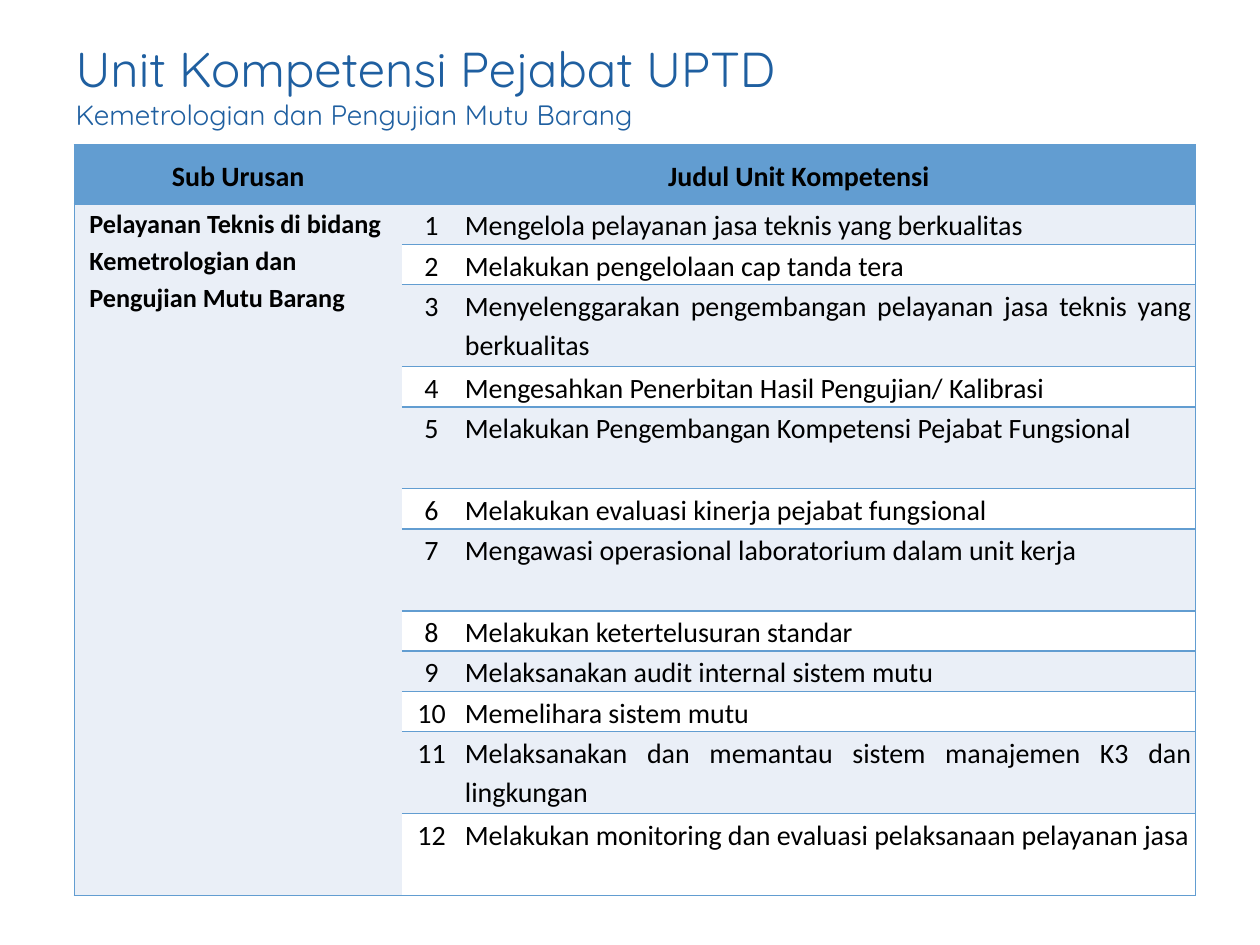
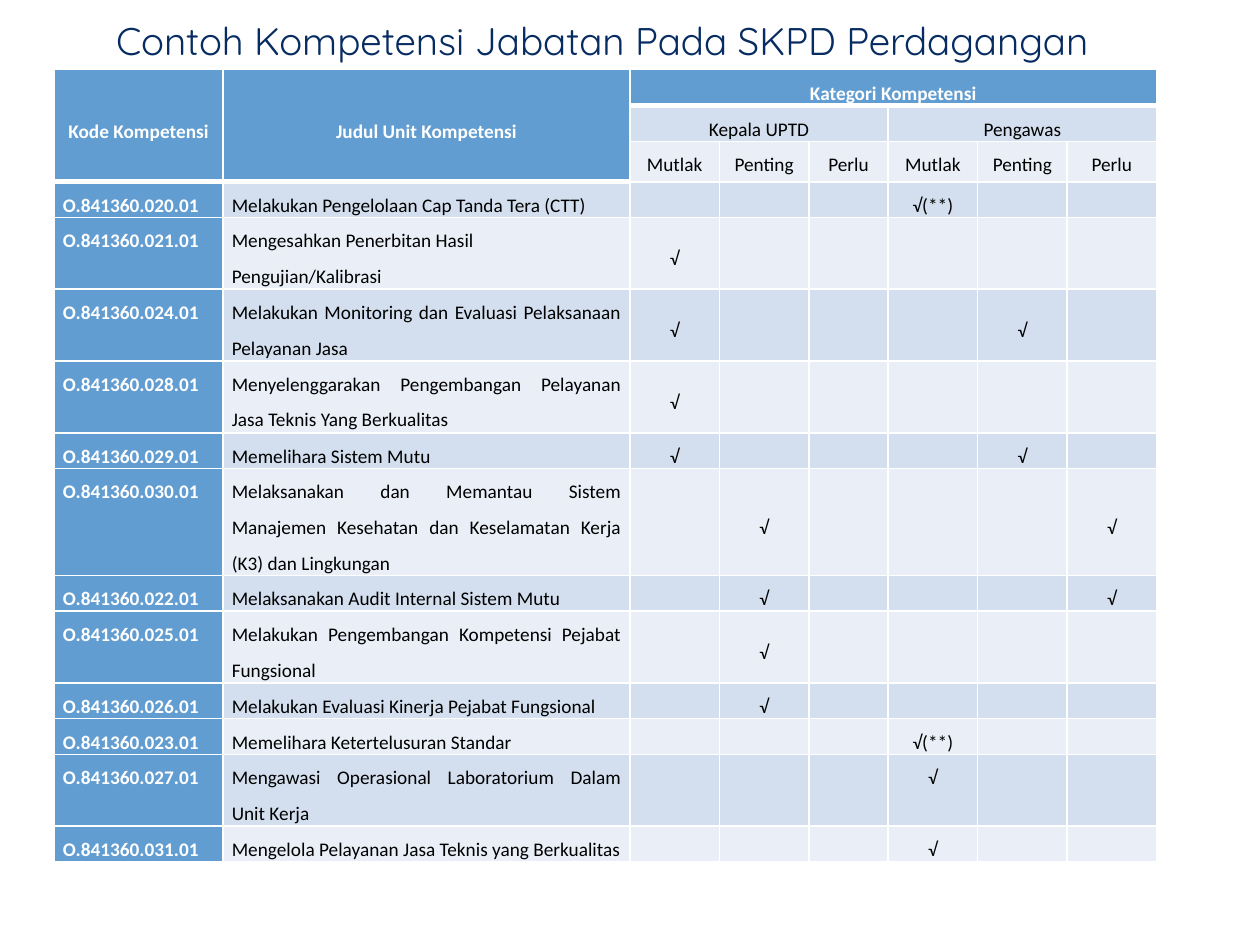
from lxml.etree import SubElement
from pptx import Presentation
from pptx.dml.color import RGBColor
from pptx.enum.text import MSO_ANCHOR, PP_ALIGN
from pptx.oxml.ns import qn
from pptx.util import Inches, Pt

BLUE = RGBColor(0x62, 0x9D, 0xD1)
PALE = RGBColor(0xEA, 0xEF, 0xF7)
MIST = RGBColor(0xD3, 0xDF, 0xEE)
WHITE = RGBColor(0xFF, 0xFF, 0xFF)
BLACK = RGBColor(0, 0, 0)
ROYAL = RGBColor(0x1F, 0x5F, 0xA0)
NAVY = RGBColor(0x07, 0x2C, 0x62)
PLAIN = "{2D5ABB26-0587-4C30-8999-92F81FD0307C}"
MID, TOP = MSO_ANCHOR.MIDDLE, MSO_ANCHOR.TOP
LEFT, CENTER, FULL = PP_ALIGN.LEFT, PP_ALIGN.CENTER, PP_ALIGN.JUSTIFY

AREA = "Pelayanan Teknis di bidang Kemetrologian dan Pengujian Mutu Barang"
UNITS = [
    ("Mengelola pelayanan jasa teknis yang berkualitas", 1),
    ("Melakukan pengelolaan cap tanda tera", 1),
    ("Menyelenggarakan pengembangan pelayanan jasa teknis yang berkualitas", 2),
    ("Mengesahkan Penerbitan Hasil Pengujian/ Kalibrasi", 1),
    ("Melakukan Pengembangan Kompetensi Pejabat Fungsional", 2),
    ("Melakukan evaluasi kinerja pejabat fungsional", 1),
    ("Mengawasi operasional laboratorium dalam unit kerja", 2),
    ("Melakukan ketertelusuran standar", 1),
    ("Melaksanakan audit internal sistem mutu", 1),
    ("Memelihara sistem mutu", 1),
    ("Melaksanakan dan memantau sistem manajemen K3 dan lingkungan", 2),
    ("Melakukan monitoring dan evaluasi pelaksanaan pelayanan jasa", 2),
]
UNIT_COLS = [2.6, 0.47, 5.83]
UNIT_HEAD = 0.47
UNIT_HIGH = {1: 0.32, 2: 0.65}

LEVELS = ["Mutlak", "Penting", "Perlu"]
TICK, STAR = "√", "√(**)"
JOBS = [
    ("020", "Melakukan Pengelolaan Cap Tanda Tera (CTT)", {5: STAR}, 1),
    ("021", "Mengesahkan Penerbitan Hasil Pengujian/Kalibrasi", {2: TICK}, 2),
    ("024", "Melakukan Monitoring dan Evaluasi Pelaksanaan Pelayanan Jasa",
     {2: TICK, 6: TICK}, 2),
    ("028", "Menyelenggarakan Pengembangan Pelayanan Jasa Teknis Yang Berkualitas",
     {2: TICK}, 2),
    ("029", "Memelihara Sistem Mutu", {2: TICK, 6: TICK}, 1),
    ("030", "Melaksanakan dan Memantau Sistem Manajemen Kesehatan dan "
     "Keselamatan Kerja (K3) dan Lingkungan", {3: TICK, 7: TICK}, 3),
    ("022", "Melaksanakan Audit Internal Sistem Mutu", {3: TICK, 7: TICK}, 1),
    ("025", "Melakukan Pengembangan Kompetensi Pejabat Fungsional", {3: TICK}, 2),
    ("026", "Melakukan Evaluasi Kinerja Pejabat Fungsional", {3: TICK}, 1),
    ("023", "Memelihara Ketertelusuran Standar", {5: STAR}, 1),
    ("027", "Mengawasi Operasional Laboratorium Dalam Unit Kerja", {5: TICK}, 2),
    ("031", "Mengelola Pelayanan Jasa Teknis yang Berkualitas", {5: TICK}, 1),
]
RAGGED = "021"
JOB_COLS = [1.34, 3.23, 0.71, 0.71, 0.63, 0.71, 0.71, 0.71]
JOB_HEAD = [0.29, 0.28, 0.32]
JOB_HIGH = {1: 0.28, 2: 0.57, 3: 0.85}


def write(frame, text, size=16, font="Calibri", color=BLACK, bold=False,
          align=LEFT, space=None):
    para = frame.paragraphs[0]
    para.alignment = align
    if space:
        para.line_spacing = space
    if not text:
        SubElement(para._p, qn("a:endParaRPr"), sz=str(size * 100))
        return
    run = para.add_run()
    run.text = text
    run.font.size, run.font.name, run.font.bold = Pt(size), font, bold
    run.font.color.rgb = color


def head(slide, box, parts, color, align):
    title = slide.shapes.title
    title.left, title.top, title.width, title.height = map(Inches, box)
    frame = title.text_frame
    frame.word_wrap, frame.vertical_anchor = True, MID
    for spot, (text, size) in enumerate(parts):
        if spot:
            frame.paragraphs[0].add_line_break()
        write(frame, text, size=size, font="Quicksand", color=color, align=align)


def grid(slide, left, top, cols, rows, spans):
    frame = slide.shapes.add_table(len(rows), len(cols), Inches(left), Inches(top),
                                   Inches(sum(cols)), Inches(sum(rows)))
    table = frame.table
    table.first_row = table.horz_banding = False
    table._tbl.tblPr[0].text = PLAIN
    for col, wide in zip(table.columns, cols):
        col.width = Inches(wide)
    for row, high in zip(table.rows, rows):
        row.height = Inches(high)
    for first, last in spans:
        table.cell(*first).merge(table.cell(*last))
    return table


def fill(cell, text, back, edges, ink, pad, anchor=TOP, indent=0, **fmt):
    cell.margin_top = cell.margin_bottom = 0
    cell.margin_left, cell.margin_right = Inches(pad + indent), Inches(pad)
    cell.vertical_anchor = anchor
    if not cell.is_spanned:
        for side in "LRTB":
            if side in edges:
                line = SubElement(cell._tc.get_or_add_tcPr(), qn(f"a:ln{side}"),
                                  w=str(Pt(edges[side])))
                solid = SubElement(line, qn("a:solidFill"))
                SubElement(solid, qn("a:srgbClr"), val=str(ink))
    cell.fill.solid()
    cell.fill.fore_color.rgb = back
    write(cell.text_frame, text, **fmt)


def units(slide):
    head(slide, (0.5, 0.28, 8.91, 0.78),
         [("Unit Kompetensi Pejabat UPTD", 28),
          ("Kemetrologian dan Pengujian Mutu Barang", 16)], ROYAL, LEFT)
    data = [["Sub Urusan", "Judul Unit Kompetensi", ""]]
    data += [["" if num > 1 else AREA, str(num), name]
             for num, (name, _) in enumerate(UNITS, 1)]
    rows = [UNIT_HEAD] + [UNIT_HIGH[lines] for _, lines in UNITS]
    table = grid(slide, 0.59, 1.15, UNIT_COLS, rows,
                 [((0, 1), (0, 2)), ((1, 0), (len(UNITS), 0))])
    for r, line in enumerate(data):
        for c, text in enumerate(line):
            edges = {"T": 1, "B": 1}
            if c == 0:
                edges["L"] = 1
            if c == 2 or (r, c) == (0, 1):
                edges["R"] = 1
            look = dict(align=(LEFT, CENTER, FULL)[c], bold=c == 0)
            back = PALE if r % 2 or c == 0 else WHITE
            if r == 0:
                back = BLUE
                look = dict(align=CENTER, bold=True, anchor=MID)
            elif c == 0:
                look.update(size=15, indent=0.09)
            fill(table.cell(r, c), text, back, edges, BLUE, 0.03, space=1.15, **look)


def jobs(slide):
    head(slide, (0.28, 0.01, 9, 0.61),
         [("Contoh Kompetensi Jabatan Pada SKPD Perdagangan", 22)], NAVY, CENTER)
    data = [
        ["Kode Kompetensi", "Judul Unit Kompetensi", "Kategori Kompetensi"] + [""] * 5,
        ["", "", "Kepala UPTD", "", "", "Pengawas", "", ""],
        ["", ""] + LEVELS * 2,
    ]
    data += [[f"O.841360.{num}.01", name] + [marks.get(c, "") for c in range(2, 8)]
             for num, name, marks, _ in JOBS]
    rows = JOB_HEAD + [JOB_HIGH[job[3]] for job in JOBS]
    table = grid(slide, 0.43, 0.55, JOB_COLS, rows,
                 [((0, 0), (2, 0)), ((0, 1), (2, 1)), ((0, 2), (0, 7)),
                  ((1, 2), (1, 4)), ((1, 5), (1, 7))])
    for r, line in enumerate(data):
        for c, text in enumerate(line):
            thick = r == 1 or (r == 3 and c < 2)
            edges = {"L": 1, "R": 1, "T": 3 if thick else 1, "B": 1 if r else 3}
            dark = r == 0 or c == 0 or (r < 3 and c == 1)
            look = dict(bold=dark, color=WHITE if dark else BLACK, align=CENTER)
            if r == 0 or (r > 2 and c > 1 and c != 5):
                look["anchor"] = MID
            if r > 2 and c < 2:
                ragged = c == 0 or JOBS[r - 3][0] == RAGGED
                look["align"] = LEFT if ragged else FULL
            back = BLUE if dark else MIST if r % 2 else PALE
            fill(table.cell(r, c), text, back, edges, WHITE, 0.07,
                 size=11, space=1.5, **look)


def main():
    deck = Presentation()
    deck.slide_width, deck.slide_height = Inches(10), Inches(7.5)
    for build in (units, jobs):
        build(deck.slides.add_slide(deck.slide_layouts[5]))
    deck.save("out.pptx")


if __name__ == "__main__":
    main()
